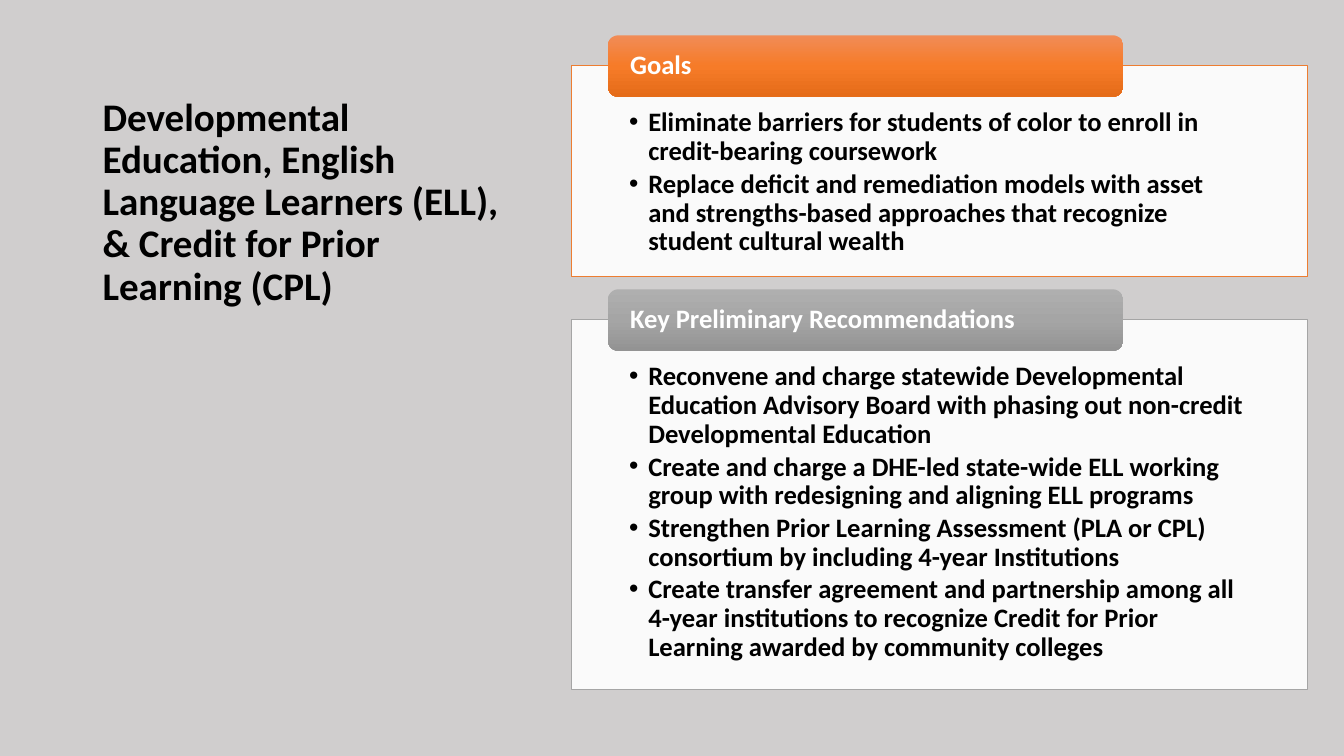
from copy import deepcopy
from dataclasses import dataclass

from lxml.etree import SubElement
from pptx import Presentation
from pptx.dml.color import RGBColor
from pptx.enum.shapes import MSO_SHAPE
from pptx.enum.text import MSO_ANCHOR, PP_ALIGN
from pptx.oxml.ns import qn
from pptx.shapes.autoshape import Shape
from pptx.slide import Slide
from pptx.text.text import TextFrame, _Paragraph
from pptx.util import Inches, Pt

FONT = "Calibri"
PANEL_LEFT, PANEL_WIDTH = 5.67, 7.3
HEADING_LEFT, HEADING_WIDTH, HEADING_HEIGHT = 6.03, 5.11, 0.61
HEADING_RISE = 0.3
BULLET_INDENT = 0.19


@dataclass(frozen=True)
class Section:
    heading: str
    bullets: tuple[str, ...]
    top: float
    height: float
    outline: str
    gradient: tuple[str, str, str]


SECTIONS = (
    Section(
        "Goals",
        (
            "Eliminate barriers for students of color to enroll in credit-bearing coursework",
            "Replace deficit and remediation models with asset and strengths-based "
            "approaches that recognize student cultural wealth",
        ),
        0.65, 2.09, "ED7D31", ("F18C57", "F67B28", "E56C19"),
    ),
    Section(
        "Key Preliminary Recommendations",
        (
            "Reconvene and charge statewide Developmental Education Advisory Board "
            "with phasing out non-credit Developmental Education",
            "Create and charge a DHE-led state-wide ELL working group with "
            "redesigning and aligning ELL programs",
            "Strengthen Prior Learning Assessment (PLA or CPL) consortium by "
            "including 4-year Institutions",
            "Create transfer agreement and partnership among all 4-year institutions "
            "to recognize Credit for Prior Learning awarded by community colleges",
        ),
        3.17, 3.67, "A5A5A5", ("AFAFAF", "A5A5A5", "939393"),
    ),
)


def color(value: str) -> RGBColor:
    return RGBColor.from_string(value)


def set_frame(frame: TextFrame, anchor: MSO_ANCHOR, left: float, top: float,
              right: float, bottom: float) -> None:
    frame.word_wrap = True
    frame.vertical_anchor = anchor
    frame.margin_left, frame.margin_top = Inches(left), Inches(top)
    frame.margin_right, frame.margin_bottom = Inches(right), Inches(bottom)


def write(para: _Paragraph, text: str, size: float, font_color: str) -> None:
    para.text = text
    para.alignment = PP_ALIGN.LEFT
    para.line_spacing = 0.9
    para.font.name = FONT
    para.font.size = Pt(size)
    para.font.bold = True
    para.font.color.rgb = color(font_color)


def add_bullet(para: _Paragraph) -> None:
    para.space_after = Pt(2.85)
    properties = para._p.get_or_add_pPr()
    properties.set("marL", str(Inches(BULLET_INDENT)))
    properties.set("indent", str(-Inches(BULLET_INDENT)))
    SubElement(properties, qn("a:buFont"), typeface="Arial")
    SubElement(properties, qn("a:buChar"), char="•")


def fill_gradient(shape: Shape, colors: tuple[str, str, str]) -> None:
    shape.fill.gradient()
    shape.fill.gradient_angle = 270
    stop_list = shape._element.spPr.find(qn("a:gradFill")).find(qn("a:gsLst"))
    stop_list.append(deepcopy(stop_list[-1]))
    for index, (stop, value) in enumerate(zip(shape.fill.gradient_stops, colors)):
        stop.position = index / 2
        stop.color.rgb = color(value)


def add_title(page: Slide) -> None:
    box = page.shapes.add_textbox(Inches(0.92), Inches(0.92), Inches(4.3), Inches(2.2))
    set_frame(box.text_frame, MSO_ANCHOR.TOP, 0.1, 0.05, 0.1, 0.05)
    write(
        box.text_frame.paragraphs[0],
        "Developmental Education, English Language Learners (ELL), "
        "& Credit for Prior Learning (CPL)",
        27.9, "000000",
    )


def add_panel(page: Slide, section: Section) -> None:
    panel = page.shapes.add_shape(
        MSO_SHAPE.RECTANGLE, Inches(PANEL_LEFT), Inches(section.top),
        Inches(PANEL_WIDTH), Inches(section.height),
    )
    panel.shadow.inherit = False
    panel.fill.solid()
    panel.fill.fore_color.rgb = color("FFFFFF")
    fill_color = panel._element.spPr.find(qn("a:solidFill")).find(qn("a:srgbClr"))
    SubElement(fill_color, qn("a:alpha"), val="90000")
    panel.line.color.rgb = color(section.outline)
    panel.line.width = Pt(0.5)
    frame = panel.text_frame
    set_frame(frame, MSO_ANCHOR.TOP, 0.57, 0.43, 0.57, 0.15)
    for index, bullet in enumerate(section.bullets):
        para = frame.add_paragraph() if index else frame.paragraphs[0]
        para.line_spacing = 0.9
        add_bullet(para)
        write(para, bullet, 19, "000000")


def add_heading(page: Slide, section: Section) -> None:
    heading = page.shapes.add_shape(
        MSO_SHAPE.ROUNDED_RECTANGLE, Inches(HEADING_LEFT),
        Inches(section.top - HEADING_RISE), Inches(HEADING_WIDTH), Inches(HEADING_HEIGHT),
    )
    heading.shadow.inherit = False
    fill_gradient(heading, section.gradient)
    heading.line.fill.background()
    set_frame(heading.text_frame, MSO_ANCHOR.MIDDLE, 0.19, 0, 0.19, 0)
    write(heading.text_frame.paragraphs[0], section.heading, 19, "FFFFFF")


def main() -> None:
    deck = Presentation()
    deck.slide_width, deck.slide_height = Inches(13.33), Inches(7.5)
    page = deck.slides.add_slide(deck.slide_layouts[6])
    page.background.fill.solid()
    page.background.fill.fore_color.rgb = color("D0CECE")
    add_title(page)
    for section in SECTIONS:
        add_panel(page, section)
        add_heading(page, section)
    deck.save("out.pptx")


if __name__ == "__main__":
    main()
